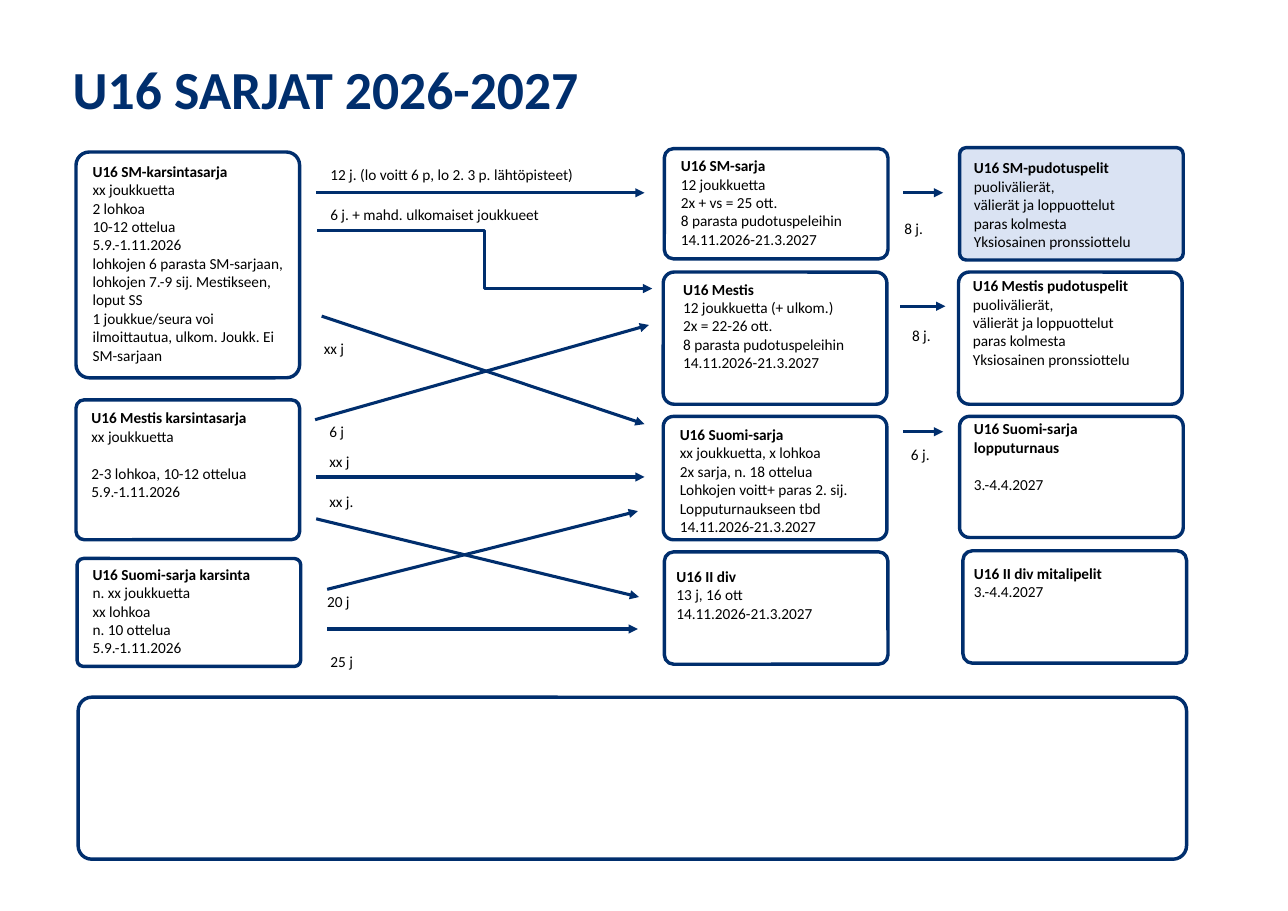
from dataclasses import dataclass

from lxml import etree
from pptx import Presentation
from pptx.dml.color import RGBColor
from pptx.enum import shapes, text
from pptx.oxml import ns
from pptx.util import Inches, Pt


@dataclass(frozen=True)
class Theme:
    navy: RGBColor = RGBColor.from_string("002E6D")
    pale: RGBColor = RGBColor.from_string("DAE3F3")
    black: RGBColor = RGBColor.from_string("000000")
    font: str = "Calibri"
    title_size: float = 35
    body_size: float = 10
    blank_line: float = 12.2
    box_line: float = 2.25
    arrow_line: float = 2


@dataclass(frozen=True)
class Stage:
    """One box of a column: offset in the column, text inset, and its lines."""
    offset: tuple
    height: float
    inset: tuple
    lines: tuple
    corner: float = 0.083
    fill: RGBColor | None = None
    bold_lines: int = 1
    gap_before: int | None = None


THEME = Theme()
BOX_WIDTH = 2.03
SEASON = "14.11.2026-21.3.2027"
QUALIFYING = "5.9.-1.11.2026"
FINALS = "3.-4.4.2027"
PLAYOFF = ("puolivälierät,", "välierät ja loppuottelut", "paras kolmesta",
           "Yksiosainen pronssiottelu")

QUALIFIERS = (
    Stage((0, 0), 2.05, (0.15, 0.09),
          ("U16 SM-karsintasarja", "xx joukkuetta", "2 lohkoa", "10-12 ottelua", QUALIFYING,
           "lohkojen 6 parasta SM-sarjaan, lohkojen 7.-9 sij. Mestikseen, loput SS",
           "1 joukkue/seura voi ilmoittautua, ulkom. Joukk. Ei SM-sarjaan"), corner=0.059),
    Stage((0, 2.25), 1.27, (0.14, 0.08),
          ("U16 Mestis karsintasarja", "xx joukkuetta", "2-3 lohkoa, 10-12 ottelua", QUALIFYING),
          corner=0.059, gap_before=2),
    Stage((0.01, 3.69), 0.98, (0.14, 0.06),
          ("U16 Suomi-sarja karsinta", "n. xx joukkuetta", "xx lohkoa", "n. 10 ottelua", QUALIFYING),
          corner=0.059),
)
LEAGUES = (
    Stage((0.01, 0), 1, (0.15, 0.07),
          ("U16 SM-sarja", "12 joukkuetta", "2x + vs = 25 ott.", "8 parasta pudotuspeleihin", SEASON)),
    Stage((0, 1.12), 1.2, (0.18, 0.07),
          ("U16 Mestis", "12 joukkuetta (+ ulkom.)", "2x = 22-26 ott.",
           "8 parasta pudotuspeleihin", SEASON)),
    Stage((0, 2.43), 1.12, (0.15, 0.08),
          ("U16 Suomi-sarja", "xx joukkuetta, x lohkoa", "2x sarja, n. 18 ottelua",
           "Lohkojen voitt+ paras 2. sij. Lopputurnaukseen tbd", SEASON)),
    Stage((0.01, 3.66), 1.02, (0.11, 0.14), ("U16 II div", "13 j, 16 ott", SEASON)),
)
PLAYOFFS = (
    Stage((0.01, 0), 1.02, (0.13, 0.1), ("U16 SM-pudotuspelit", *PLAYOFF),
          corner=0.059, fill=THEME.pale),
    Stage((0, 1.13), 1.2, (0.13, 0.04), ("U16 Mestis pudotuspelit", *PLAYOFF)),
    Stage((0.01, 2.44), 1.1, (0.13, 0.03), ("U16 Suomi-sarja", "lopputurnaus", FINALS),
          bold_lines=2, gap_before=2),
    Stage((0.04, 3.66), 1.02, (0.1, 0.12), ("U16 II div mitalipelit", FINALS)),
)

# Arrows are (from x, from y, to x, to y); labels are (x, y, width, words)
LEAGUE_ARROWS = (
    (0.07, 0.35, 3.05, 0.35), (0.12, 1.47, 3.05, 2.45), (0.06, 2.41, 3.09, 1.55),
    (0.07, 2.93, 3.05, 2.93), (0.07, 3.31, 3, 4.02), (0.17, 3.95, 2.99, 3.24),
    (0.17, 4.31, 2.99, 4.31),
)
LEAGUE_ELBOWS = ((0.08, 0.69, 3.12, 1.22),)
LEAGUE_LABELS = (
    (0.1, 0.05, 2.46, "12 j. (lo voitt 6 p, lo 2. 3 p. lähtöpisteet)"),
    (0.1, 0.41, 2.24, "6 j. + mahd. ulkomaiset joukkueet"),
    (0.04, 1.63, 0.78, "xx j"), (0.09, 2.38, 0.78, "6 j"), (0.09, 2.66, 0.78, "xx j"),
    (0.09, 3.02, 1.19, "xx j."), (0.07, 3.93, 0.78, "20 j"), (0.1, 4.47, 1.29, "25 j"),
)
PLAYOFF_ARROWS = ((0.1, 0.05, 0.46, 0.05), (0.07, 1.08, 0.48, 1.08), (0.1, 2.22, 0.46, 2.22))
PLAYOFF_LABELS = ((0.01, 0.24, 0.5, "8 j."), (0.08, 1.21, 0.5, "8 j."), (0.07, 2.29, 0.5, "6 j."))


def format_paragraph(paragraph, size, color, bold=False):
    paragraph.alignment = text.PP_ALIGN.LEFT
    for run in paragraph.runs:
        run.font.name = THEME.font
        run.font.size = Pt(size)
        run.font.bold = bold
        run.font.color.rgb = color


def add_title(slide, left, top, width, height):
    title = slide.shapes.title
    title.left, title.top = Inches(left), Inches(top)
    title.width, title.height = Inches(width), Inches(height)
    frame = title.text_frame
    frame.text = "U16 SARJAT 2026-2027"
    frame.auto_size = text.MSO_AUTO_SIZE.NONE
    frame.vertical_anchor = text.MSO_ANCHOR.TOP
    format_paragraph(frame.paragraphs[0], THEME.title_size, THEME.navy, True)


def add_box(slide, left, top, width, height, corner, fill=None):
    box = slide.shapes.add_shape(shapes.MSO_SHAPE.ROUNDED_RECTANGLE, Inches(left), Inches(top),
                                 Inches(width), Inches(height))
    box.adjustments[0] = corner
    box.shadow.inherit = False
    box.line.color.rgb = THEME.navy
    box.line.width = Pt(THEME.box_line)
    if fill is None:
        box.fill.background()
    else:
        box.fill.solid()
        box.fill.fore_color.rgb = fill
    return box


def add_column(slide, left, top, stages):
    for stage in stages:
        dx, dy = stage.offset
        box = add_box(slide, left + dx, top + dy, BOX_WIDTH, stage.height, stage.corner, stage.fill)
        frame = box.text_frame
        frame.word_wrap = True
        frame.vertical_anchor = text.MSO_ANCHOR.TOP
        # A rounded corner already pushes the text in by 29 % of its radius
        rounding = 0.29 * stage.corner * min(BOX_WIDTH, stage.height)
        frame.margin_left = Inches(stage.inset[0] - rounding)
        frame.margin_top = Inches(max(0, stage.inset[1] - rounding))
        frame.margin_right, frame.margin_bottom = Inches(0.05), 0
        frame.text = "\n".join(stage.lines)
        for index, paragraph in enumerate(frame.paragraphs):
            format_paragraph(paragraph, THEME.body_size, THEME.black, index < stage.bold_lines)
            if index == stage.gap_before:
                paragraph.space_before = Pt(THEME.blank_line)


def add_arrow(slide, left, top, ends, kind):
    x1, y1, x2, y2 = ends
    arrow = slide.shapes.add_connector(kind, Inches(left + x1), Inches(top + y1),
                                       Inches(left + x2), Inches(top + y2))
    arrow.line.color.rgb = THEME.navy
    arrow.line.width = Pt(THEME.arrow_line)
    etree.SubElement(arrow.line._get_or_add_ln(), ns.qn("a:tailEnd"), type="triangle")
    etree.SubElement(arrow._element.spPr, ns.qn("a:effectLst"))


def add_flows(slide, left, top, arrows, labels, elbows=()):
    for ends in arrows:
        add_arrow(slide, left, top, ends, shapes.MSO_CONNECTOR.STRAIGHT)
    for ends in elbows:
        add_arrow(slide, left, top, ends, shapes.MSO_CONNECTOR.ELBOW)
    for x, y, width, words in labels:
        label = slide.shapes.add_textbox(Inches(left + x), Inches(top + y), Inches(width), Inches(0.27))
        label.text_frame.word_wrap = True
        label.text_frame.text = words
        format_paragraph(label.text_frame.paragraphs[0], THEME.body_size, THEME.black)


def main():
    presentation = Presentation()
    presentation.slide_width, presentation.slide_height = Inches(11.69), Inches(8.27)
    slide = presentation.slides.add_slide(presentation.slide_layouts.get_by_name("Title Only"))
    add_title(slide, 0.56, 0.46, 9.64, 0.69)
    # Three columns of series, left to right through the season
    add_column(slide, 0.69, 1.38, QUALIFIERS)
    add_column(slide, 6.02, 1.35, LEAGUES)
    add_column(slide, 8.7, 1.34, PLAYOFFS)
    # Teams moving between the columns
    add_flows(slide, 2.8, 1.4, LEAGUE_ARROWS, LEAGUE_LABELS, LEAGUE_ELBOWS)
    add_flows(slide, 8.1, 1.7, PLAYOFF_ARROWS, PLAYOFF_LABELS)
    # Empty box for remarks
    add_box(slide, 0.71, 6.33, 10.06, 1.47, 0.083)
    presentation.save("out.pptx")


if __name__ == "__main__":
    main()
